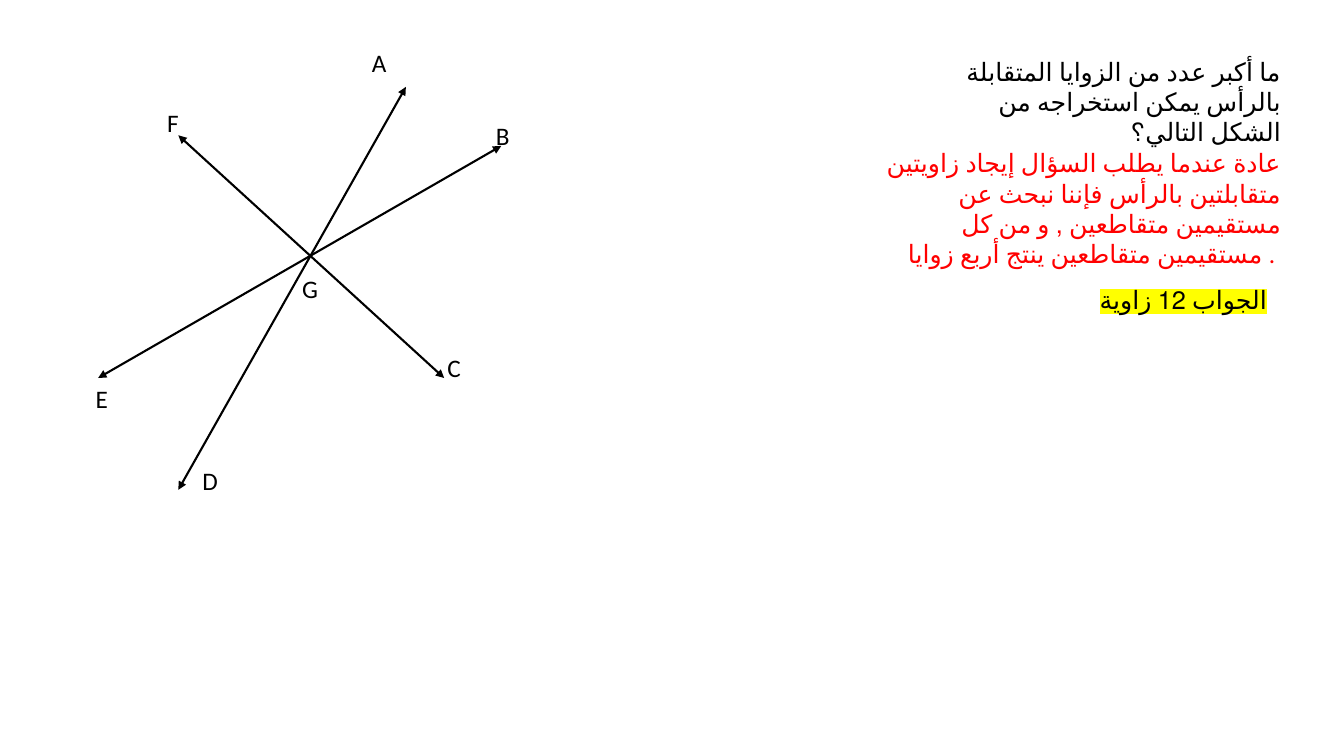
import pptx
import pptx.dml.color
import pptx.enum.lang
import pptx.enum.shapes
import pptx.enum.text
import pptx.oxml.ns
import pptx.util
from lxml import etree

deck = pptx.Presentation()
deck.slide_width = pptx.util.Inches(13.333)
deck.slide_height = pptx.util.Inches(7.5)
slide = deck.slides.add_slide(deck.slide_layouts[6])
qn = pptx.oxml.ns.qn


def percent(*lengths):
    """Turn alternating horizontal and vertical shares of the slide into EMU."""
    sides = (deck.slide_width, deck.slide_height) * 2
    return [round(side * share / 100) for side, share in zip(sides, lengths)]


def add_text(text, place, color="000000", arabic=True):
    box = slide.shapes.add_textbox(*percent(*place))
    box.text_frame.word_wrap = True
    box.text_frame.auto_size = pptx.enum.text.MSO_AUTO_SIZE.SHAPE_TO_FIT_TEXT
    paragraph = box.text_frame.paragraphs[0]
    paragraph.text = text
    if arabic:
        paragraph.alignment = pptx.enum.text.PP_ALIGN.RIGHT
        paragraph.runs[0].font.language_id = pptx.enum.lang.MSO_LANGUAGE_ID.ARABIC
    paragraph.font.name = "Calibri"
    paragraph.font.size = pptx.util.Pt(18)
    paragraph.font.color.rgb = pptx.dml.color.RGBColor.from_string(color)
    return paragraph


# Three lines crossing at G
ends = {"A": (30.2, 11.5), "B": (37.3, 19.3), "C": (33.05, 50),
        "D": (13.27, 64.8), "E": (7.3, 50), "F": (13.27, 17.9)}
for start, end in ("AD", "EB", "FC"):
    ray = slide.shapes.add_connector(
        pptx.enum.shapes.MSO_CONNECTOR.STRAIGHT, *percent(*ends[start], *ends[end]))
    ray.line.width = pptx.util.Pt(1.5)
    ray.line.color.rgb = pptx.dml.color.RGBColor.from_string("000000")
    for arrow in ("a:headEnd", "a:tailEnd"):
        etree.SubElement(ray.line._get_or_add_ln(), qn(arrow), type="triangle")
    etree.SubElement(ray._element.spPr, qn("a:effectLst"))

# Point letters: left, top, width
letter_height = 5.3
for letter, left, top, width in [
    ("A", 26.93, 5.6, 3.2), ("B", 36.15, 15.2, 2.6), ("C", 32.55, 46, 2.6),
    ("D", 14.33, 60.9, 2.7), ("E", 6.38, 50.1, 2.4), ("F", 11.7, 13.6, 2.4),
    ("G", 21.75, 35.5, 2.7),
]:
    add_text(letter, (left, top, width, letter_height), arabic=False)

# Question, hint and answer
add_text("ما أكبر عدد من الزوايا المتقابلة بالرأس يمكن استخراجه من الشكل التالي؟",
         (69.8, 6.8, 26.25, 9.5))
add_text("عادة عندما يطلب السؤال إيجاد زاويتين متقابلتين بالرأس فإننا نبحث عن "
         "مستقيمين متقاطعين , و من كل مستقيمين متقاطعين ينتج أربع زوايا . ",
         (64.05, 18.9, 32, 13.5), "FF0000")
answer = add_text("الجواب 12 زاوية", (73.4, 36.9, 21.6, letter_height))
highlight = etree.SubElement(answer.runs[0].font._element, qn("a:highlight"))
etree.SubElement(highlight, qn("a:srgbClr"), val="FFFF00")

deck.save("out.pptx")
